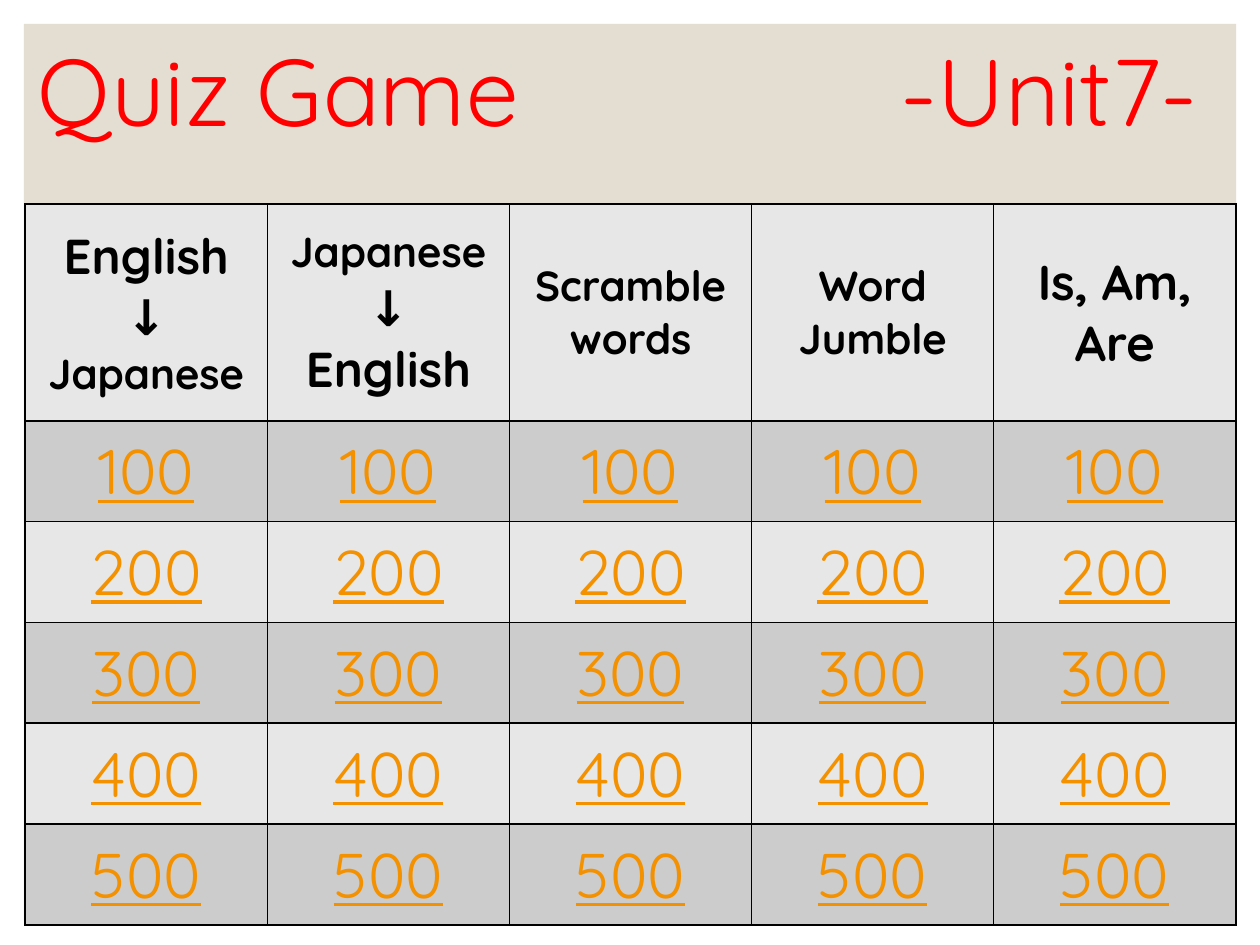
from lxml.etree import SubElement
from pptx import Presentation
from pptx.dml.color import RGBColor
from pptx.enum.shapes import MSO_SHAPE
from pptx.enum.text import MSO_ANCHOR, MSO_AUTO_SIZE, PP_ALIGN
from pptx.oxml.ns import qn
from pptx.util import Inches, Pt

FONT = "Quicksand"
COLORS = {
    "panel": "E3DED1",
    "title": "FF0000",
    "heading": "000000",
    "points": "F49100",
    "border": "000000",
    "light": "E7E7E7",
    "dark": "CCCCCC",
}

# Each category is a list of (line, size in points)
CATEGORIES = [
    [("English", 28), ("↓", 28), ("Japanese", 24)],
    [("Japanese", 24), ("↓", 28), ("English", 28)],
    [("Scramble words", 24)],
    [("Word Jumble", 24)],
    [("Is, Am, Are", 28)],
]
POINTS = [100, 200, 300, 400, 500]


def color(name):
    return RGBColor.from_string(COLORS[name])


def style_font(paragraph, size, color_name, bold=False, underline=False):
    font = paragraph.font
    font.name = FONT
    font.size = Pt(size)
    font.bold = bold
    font.underline = underline
    font.color.rgb = color(color_name)


def add_panel(slide):
    panel = slide.shapes.add_shape(
        MSO_SHAPE.RECTANGLE, Inches(0.19), Inches(0.19), Inches(9.62), Inches(7.12))
    panel.shadow.inherit = False
    panel.fill.solid()
    panel.fill.fore_color.rgb = color("panel")
    panel.line.fill.background()
    # Send the panel behind the title
    slide.shapes.title._element.addprevious(panel._element)


def set_title(slide, game, unit):
    title = slide.shapes.title
    title.left, title.top = Inches(0.2), Inches(0.3)
    title.width, title.height = Inches(9.61), Inches(0.93)
    frame = title.text_frame
    frame.text = f"{game}\t{unit}"
    frame.auto_size = MSO_AUTO_SIZE.NONE
    frame.vertical_anchor = MSO_ANCHOR.MIDDLE
    heading = frame.paragraphs[0]
    heading.alignment = PP_ALIGN.LEFT
    heading.line_spacing = 0.9
    # A tab stop places the unit at the right
    tabs = SubElement(heading._p.get_or_add_pPr(), qn("a:tabLst"))
    SubElement(tabs, qn("a:tab"), pos=str(Inches(6.85)), algn="l")
    style_font(heading, 54, "title")


def add_borders(cell):
    properties = cell._tc.get_or_add_tcPr()
    for side in ("lnL", "lnR", "lnT", "lnB"):
        line = SubElement(properties, qn(f"a:{side}"), w=str(Pt(1)))
        fill = SubElement(line, qn("a:solidFill"))
        SubElement(fill, qn("a:srgbClr"), val=COLORS["border"])


def fill_cell(cell, lines, fill_name, **font_style):
    add_borders(cell)
    cell.fill.solid()
    cell.fill.fore_color.rgb = color(fill_name)
    cell.vertical_anchor = MSO_ANCHOR.MIDDLE
    cell.text = "\n".join(text for text, _ in lines)
    for paragraph, (_, size) in zip(cell.text_frame.paragraphs, lines):
        paragraph.alignment = PP_ALIGN.CENTER
        style_font(paragraph, size, **font_style)


def add_board(slide):
    board = slide.shapes.add_table(
        len(POINTS) + 1, len(CATEGORIES),
        Inches(0.2), Inches(1.62), Inches(9.61), Inches(5.75)).table
    board.first_row = board.horz_banding = False
    for column in board.columns:
        column.width = Inches(9.61 / len(CATEGORIES))
    for index, row in enumerate(board.rows):
        row.height = Inches(0.8 if index else 1.72)

    for col, category in enumerate(CATEGORIES):
        # Category heading
        fill_cell(board.cell(0, col), category, "light",
                  color_name="heading", bold=True)
        # Point values on alternating bands
        for row, points in enumerate(POINTS, start=1):
            fill_cell(board.cell(row, col), [(str(points), 36)],
                      "dark" if row % 2 else "light",
                      color_name="points", underline=True)


def main():
    prs = Presentation()
    prs.slide_width, prs.slide_height = Inches(10), Inches(7.5)
    slide = prs.slides.add_slide(prs.slide_layouts[5])
    add_panel(slide)
    set_title(slide, "Quiz Game", "-Unit7-")
    add_board(slide)
    prs.save("out.pptx")


if __name__ == "__main__":
    main()
